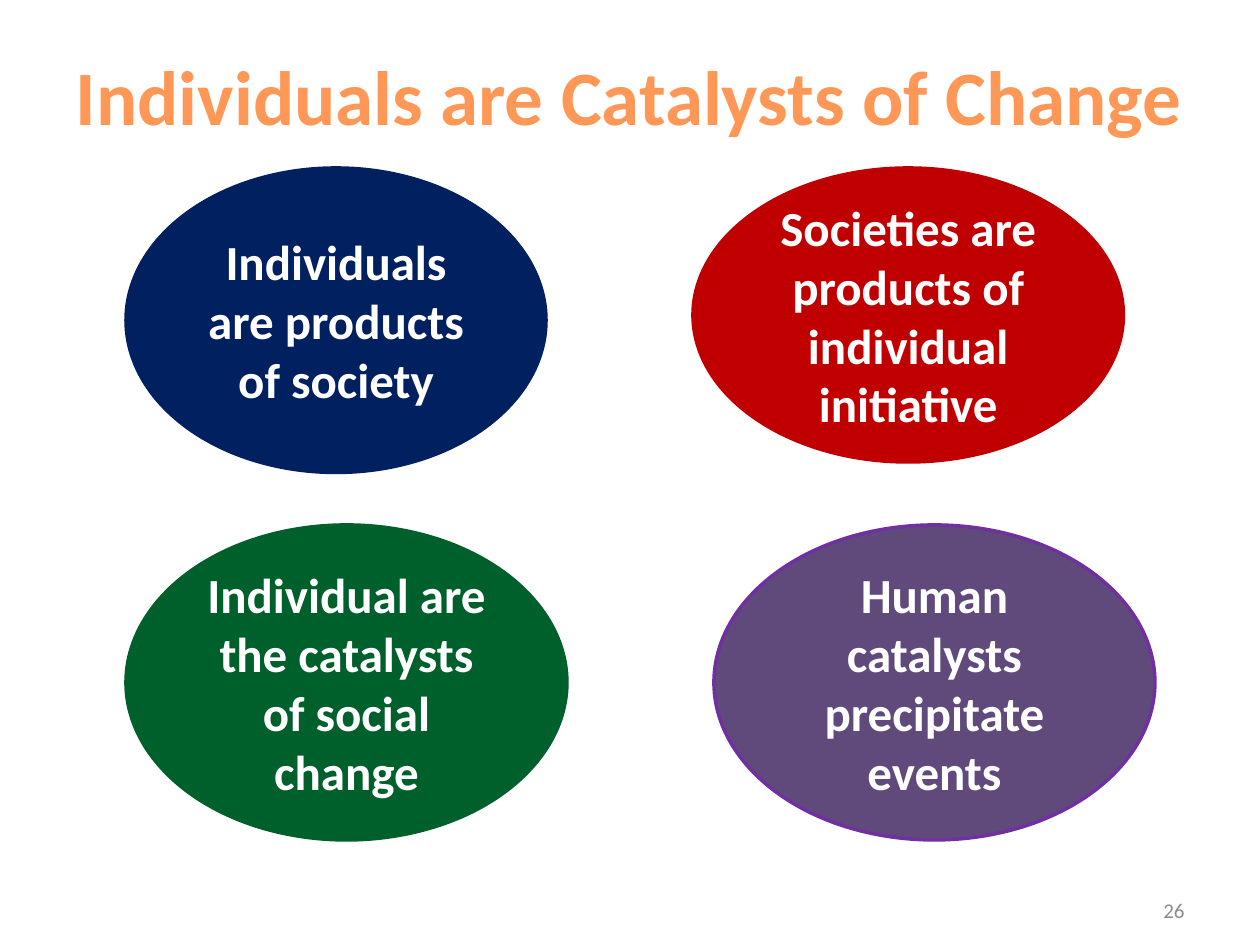
import dataclasses

import pptx
import pptx.dml.color
import pptx.enum.shapes
import pptx.enum.text
import pptx.slide
import pptx.text.text
import pptx.util

Pt = pptx.util.Pt
Align = pptx.enum.text.PP_ALIGN
Anchor = pptx.enum.text.MSO_ANCHOR


@dataclasses.dataclass(frozen=True)
class Theme:
    font: str = "Calibri"
    title_color: str = "FF9856"
    idea_color: str = "FFFFFF"
    number_color: str = "8C8C8C"
    title_size: int = 44
    idea_size: int = 28
    number_size: int = 12
    outline: int = 2


@dataclasses.dataclass(frozen=True)
class Idea:
    text: str
    left: float
    top: float
    width: float
    height: float
    fill: str
    line: str


THEME = Theme()
LEFT, UPPER, LOWER = 72, 96, 300
IDEAS = [
    Idea("Individual are the catalysts of social change",
         LEFT, LOWER, 252, 180, "00602B", "00602B"),
    Idea("Individuals are products of society",
         LEFT, UPPER, 240, 174, "002060", "002060"),
    Idea("Societies are products of individual initiative",
         396, UPPER, 246, 168, "C00000", "C00000"),
    Idea("Human catalysts precipitate events",
         408, LOWER, 252, 180, "604A7B", "7030A0"),
]


def rgb(code: str) -> pptx.dml.color.RGBColor:
    return pptx.dml.color.RGBColor.from_string(code)


def write(frame: pptx.text.text.TextFrame, text: str, size: int, color: str,
          align: Align, anchor: Anchor, bold: bool = True) -> None:
    frame.text = text
    frame.vertical_anchor = anchor
    frame.word_wrap = True
    paragraph = frame.paragraphs[0]
    paragraph.alignment = align
    font = paragraph.runs[0].font
    font.name = THEME.font
    font.size = Pt(size)
    font.bold = bold
    font.color.rgb = rgb(color)


def draw_idea(slide: pptx.slide.Slide, idea: Idea) -> None:
    oval = slide.shapes.add_shape(
        pptx.enum.shapes.MSO_SHAPE.OVAL,
        Pt(idea.left), Pt(idea.top), Pt(idea.width), Pt(idea.height))
    oval.shadow.inherit = False
    oval.fill.solid()
    oval.fill.fore_color.rgb = rgb(idea.fill)
    oval.line.color.rgb = rgb(idea.line)
    oval.line.width = Pt(THEME.outline)
    write(oval.text_frame, idea.text, THEME.idea_size, THEME.idea_color,
          Align.CENTER, Anchor.MIDDLE)


def main() -> None:
    deck = pptx.Presentation()
    deck.slide_width, deck.slide_height = Pt(720), Pt(540)
    slide = deck.slides.add_slide(deck.slide_layouts.get_by_name("Title Only"))

    # Title
    title = slide.shapes.title
    title.left, title.top = Pt(24.5), Pt(24)
    title.width, title.height = Pt(670.5), Pt(60.5)
    write(title.text_frame, "Individuals are Catalysts of Change",
          THEME.title_size, THEME.title_color, Align.CENTER, Anchor.TOP)
    title.text_frame.word_wrap = False
    title.text_frame.auto_size = pptx.enum.text.MSO_AUTO_SIZE.SHAPE_TO_FIT_TEXT

    # Four ideas
    for idea in IDEAS:
        draw_idea(slide, idea)

    # Slide number
    number = slide.shapes.add_textbox(Pt(516), Pt(505.5), Pt(168), Pt(28.75))
    write(number.text_frame, "26", THEME.number_size, THEME.number_color,
          Align.RIGHT, Anchor.MIDDLE, bold=False)

    deck.save("out.pptx")


if __name__ == "__main__":
    main()
